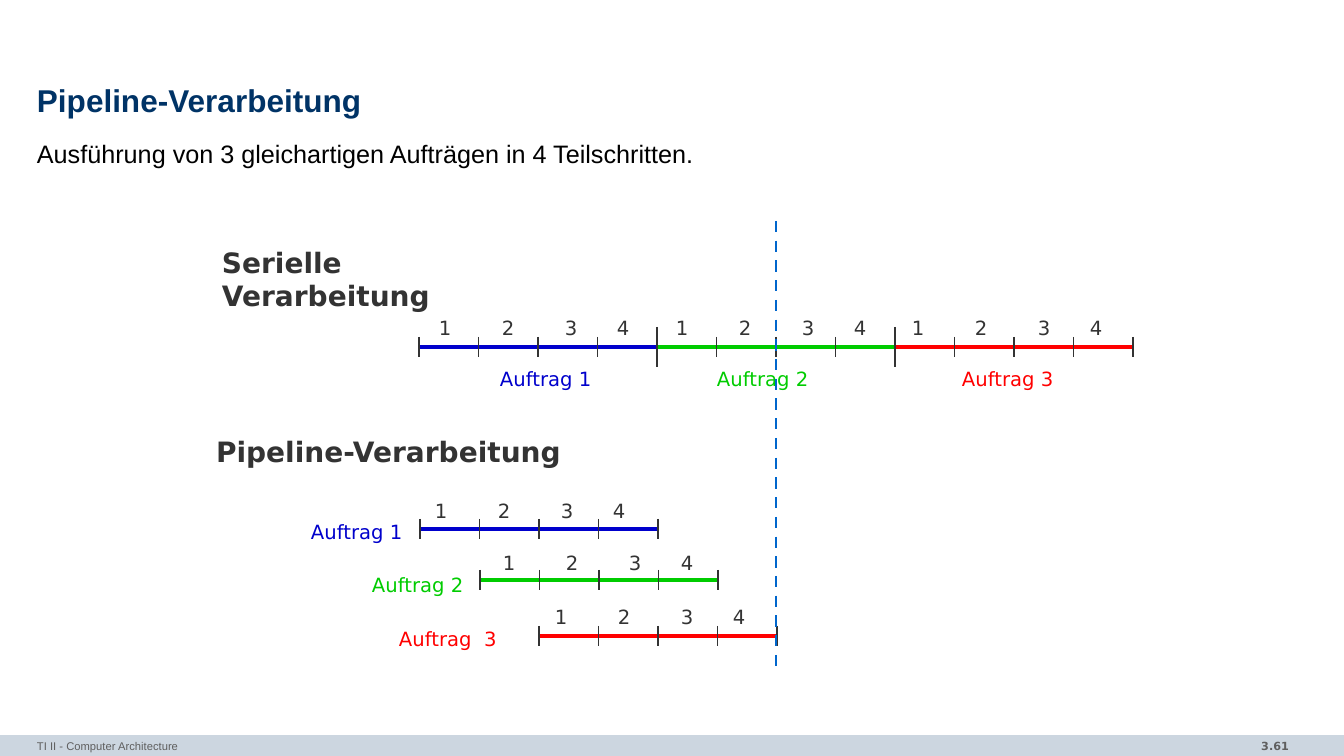
from lxml.etree import SubElement
from pptx import Presentation
from pptx.dml.color import RGBColor
from pptx.enum.dml import MSO_LINE
from pptx.enum.shapes import MSO_CONNECTOR, MSO_SHAPE
from pptx.enum.text import MSO_ANCHOR, PP_ALIGN
from pptx.oxml.ns import qn
from pptx.util import Pt

COLORS = {
    "white": "FFFFFF", "navy": "003366", "black": "000000", "bar": "CCD6E0",
    "gray": "5F5F5F", "dark": "333333", "blue": "0000CC", "green": "00CC00",
    "red": "FF0000", "marker": "0066CC",
}
FORMATS = {
    "title": {"size": Pt(22.5), "name": "Arial", "bold": True},
    "body": {"size": Pt(18), "name": "Arial"},
    "heading": {"size": Pt(20), "name": "DejaVu Sans", "bold": True},
    "label": {"size": Pt(14), "name": "DejaVu Sans"},
    "footer": {"size": Pt(8), "name": "Arial"},
    "number": {"size": Pt(8), "name": "DejaVu Sans", "bold": True},
}
FLUSH = (0, 0, 0, 0)
PADDED = (10, 5, 10, 5)
TEXTS = [
    ("Pipeline-Verarbeitung", "title", "navy", (37, 79, 1270, 47), FLUSH,
     {"line_spacing": 0.85}, MSO_ANCHOR.MIDDLE),
    ("Ausführung von 3 gleichartigen Aufträgen in 4 Teilschritten.", "body", "black",
     (37, 138, 1270, 577), FLUSH, {"line_spacing": 1.02}, MSO_ANCHOR.TOP),
    ("TI II - Computer Architecture", "footer", "gray", (37, 734, 879, 22),
     (0, 5, 0, 5), {}, MSO_ANCHOR.TOP),
    ("3.61", "number", "gray", (1119, 734, 180, 23), PADDED,
     {"alignment": PP_ALIGN.RIGHT}, MSO_ANCHOR.TOP),
    ("Serielle Verarbeitung", "heading", "dark", (212, 240, 250, 78), PADDED,
     {}, MSO_ANCHOR.TOP),
    ("Pipeline-Verarbeitung", "heading", "dark", (206, 430, 400, 43), PADDED,
     {}, MSO_ANCHOR.TOP),
]
TIMELINES = [
    (419, 347, ("blue", "green", "red")),
    (420, 529, ("blue",)),
    (480, 580, ("green",)),
    (539, 636, ("red",)),
]
JOBS = [
    ("Auftrag 1", "blue", (490, 362), (429, 311)),
    ("Auftrag 2", "green", (707, 362), (666, 311)),
    ("Auftrag 3", "red", (952, 362), (902, 311)),
    ("Auftrag 1", "blue", (301, 515), (425, 494)),
    ("Auftrag 2", "green", (362, 568), (493, 546)),
    ("Auftrag  3", "red", (389, 622), (545, 600)),
]
STEPS = "1\t2\t3\t4"
STEP_TABS = (63, 126, 178)
STEP_COUNT = 4
JOB_WIDTH = 238
STEP_WIDTH = JOB_WIDTH / STEP_COUNT
MARKER = (776, 221, 776, 669)
SCALE = 914400 / 100.8


def px(value):
    return round(value * SCALE)


def rgb(name):
    return RGBColor.from_string(COLORS[name])


def add_text(slide, text, style, color, box, insets=PADDED, para=None,
             anchor=MSO_ANCHOR.TOP, tabs=()):
    tf = slide.shapes.add_textbox(*map(px, box)).text_frame
    tf.word_wrap = True
    tf.vertical_anchor = anchor
    for side, inset in zip(("left", "top", "right", "bottom"), insets):
        setattr(tf, f"margin_{side}", px(inset))
    p = tf.paragraphs[0]
    for key, value in (para or {}).items():
        setattr(p, key, value)
    if tabs:
        tab_list = SubElement(p._p.get_or_add_pPr(), qn("a:tabLst"))
        for pos in tabs:
            SubElement(tab_list, qn("a:tab"), pos=str(px(pos)), algn="l")
    r = p.add_run()
    r.text = text
    for key, value in FORMATS[style].items():
        setattr(r.font, key, value)
    r.font.color.rgb = rgb(color)


def add_line(slide, ends, color, width, dash=None):
    line = slide.shapes.add_connector(MSO_CONNECTOR.STRAIGHT, *map(px, ends))
    line.line.color.rgb = rgb(color)
    line.line.width = Pt(width)
    if dash:
        line.line.dash_style = dash
    SubElement(line._element.spPr, qn("a:effectLst"))


def add_timeline(slide, x, y, colors):
    for i, color in enumerate(colors):
        left = x + i * JOB_WIDTH
        add_line(slide, (left, y, left + JOB_WIDTH, y), color, 3)
    last = STEP_COUNT * len(colors)
    for i in range(last + 1):
        between_jobs = 0 < i < last and i % STEP_COUNT == 0
        half = 20 if between_jobs else 10
        tick = x + i * STEP_WIDTH
        add_line(slide, (tick, y - half, tick, y + half), "dark", 1)


def main():
    prs = Presentation()
    prs.slide_width, prs.slide_height = px(1344), px(756)
    slide = prs.slides.add_slide(prs.slide_layouts[6])
    slide.background.fill.solid()
    slide.background.fill.fore_color.rgb = rgb("white")

    bar = slide.shapes.add_shape(MSO_SHAPE.RECTANGLE, *map(px, (0, 735, 1344, 21)))
    bar.shadow.inherit = False
    bar.fill.solid()
    bar.fill.fore_color.rgb = rgb("bar")
    bar.line.fill.background()

    for item in TEXTS:
        add_text(slide, *item)
    for timeline in TIMELINES:
        add_timeline(slide, *timeline)
    for name, color, label_at, steps_at in JOBS:
        add_text(slide, name, "label", color, (*label_at, 130, 33))
        add_text(slide, STEPS, "label", "dark", (*steps_at, 220, 33), tabs=STEP_TABS)
    add_line(slide, MARKER, "marker", 2, MSO_LINE.DASH)
    prs.save("out.pptx")


if __name__ == "__main__":
    main()
